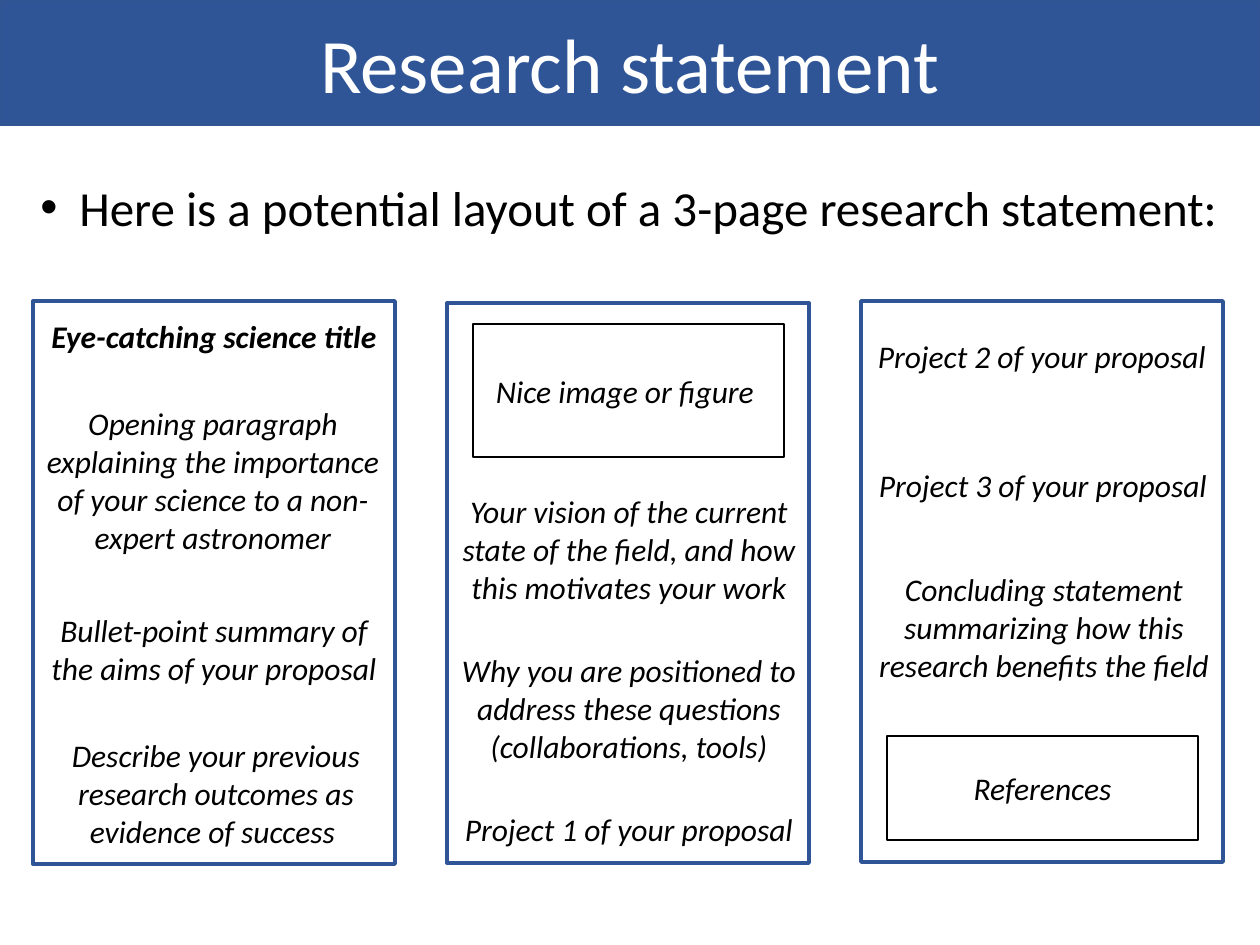
from pptx import Presentation, util as u
from pptx.dml.color import RGBColor
from pptx.enum import shapes, text
from lxml import etree

PX = 914400 / 126
COLORS = {"banner": "2F5597", "banner_edge": "325491", "paper": "FFFFFF", "ink": "000000"}
FONT = "Calibri"
PAGE_WIDTH, PAGE_HEIGHT = 1260, 945
SHEET_LEFT, SHEET_PITCH, SHEET_WIDTH = 33, 414, 362
FRAME_INSET, FRAME_WIDTH = 26, 311
LINE_HEIGHT, TEXT_MARGIN = 38, 12

TITLE = "Research statement"
INTRO = "Here is a potential layout of a 3-page research statement:"
SHEETS = [
    {"top": 301, "height": 563, "frames": [], "notes": [
        (0, 311, 1, True, "Eye-catching science title"),
        (-1, 398, 4, False, "Opening paragraph explaining the importance of your science to a non-expert astronomer"),
        (0, 605, 2, False, "Bullet-point summary of the aims of your proposal"),
        (2, 730, 3, False, "Describe your previous research outcomes as evidence of success "),
    ]},
    {"top": 303, "height": 560, "frames": [(324, 133, "Nice image or figure ")], "notes": [
        (1, 486, 3, False, "Your vision of the current state of the field, and how this motivates your work"),
        (1, 645, 3, False, "Why you are positioned to address these questions (collaborations, tools)"),
        (1, 804, 1, False, "Project 1 of your proposal"),
    ]},
    {"top": 301, "height": 561, "frames": [(736, 104, "References")], "notes": [
        (0, 331, 1, False, "Project 2 of your proposal"),
        (1, 460, 1, False, "Project 3 of your proposal"),
        (2, 564, 3, False, "Concluding statement summarizing how this research benefits the field"),
    ]},
]


def px(*lengths):
    return [u.Emu(round(length * PX)) for length in lengths]


def color(name):
    return RGBColor.from_string(COLORS[name])


def write(shape, words, size, ink="ink", bold=False, italic=False, align=text.PP_ALIGN.CENTER):
    frame = shape.text_frame
    frame.word_wrap = True
    para = frame.paragraphs[0]
    para.text = words
    para.alignment = align
    font = para.font
    font.name, font.size, font.bold, font.italic = FONT, u.Pt(size), bold, italic
    font.color.rgb = color(ink)
    return para


def add_box(page, area, fill, line, weight):
    box = page.shapes.add_shape(shapes.MSO_SHAPE.RECTANGLE, *px(*area))
    box.shadow.inherit = False
    if fill:
        box.fill.solid()
        box.fill.fore_color.rgb = color(fill)
    else:
        box.fill.background()
    box.line.color.rgb = color(line)
    box.line.width = u.Pt(weight)
    box.text_frame.vertical_anchor = text.MSO_ANCHOR.MIDDLE
    return box


def add_note(page, area, words, size, **style):
    note = page.shapes.add_textbox(*px(*area))
    para = write(note, words, size, **style)
    note.text_frame.auto_size = text.MSO_AUTO_SIZE.SHAPE_TO_FIT_TEXT
    return para


def add_bullet(para, indent):
    properties = para._p.get_or_add_pPr()
    properties.set("marL", str(px(indent)[0]))
    properties.set("indent", str(px(-indent)[0]))
    namespace = "{http://schemas.openxmlformats.org/drawingml/2006/main}"
    etree.SubElement(properties, namespace + "buFont").set("typeface", "Arial")
    etree.SubElement(properties, namespace + "buChar").set("char", "•")
    properties.append(properties.find(namespace + "defRPr"))


def add_sheet(page, index, sheet):
    left = SHEET_LEFT + index * SHEET_PITCH
    add_box(page, (left, sheet["top"], SHEET_WIDTH, sheet["height"]), "paper", "banner", 2.25)
    for top, height, words in sheet["frames"]:
        frame = add_box(page, (left + FRAME_INSET, top, FRAME_WIDTH, height), None, "ink", 1.5)
        write(frame, words, 18, italic=True)
    for shift, top, lines, bold, words in sheet["notes"]:
        area = (left + shift, top, SHEET_WIDTH, lines * LINE_HEIGHT + TEXT_MARGIN)
        add_note(page, area, words, 18, bold=bold, italic=True)


def main():
    deck = Presentation()
    deck.slide_width, deck.slide_height = px(PAGE_WIDTH, PAGE_HEIGHT)
    page = deck.slides.add_slide(deck.slide_layouts[6])
    banner = add_box(page, (0, 0, PAGE_WIDTH, 125), "banner", "banner_edge", 1)
    write(banner, TITLE, 44, ink="paper")
    for index, sheet in enumerate(SHEETS):
        add_sheet(page, index, sheet)
    intro = add_note(page, (28, 171, 1215, 72), INTRO, 28, align=text.PP_ALIGN.LEFT)
    intro.space_after = u.Pt(24)
    add_bullet(intro, 39)
    deck.save("out.pptx")


if __name__ == "__main__":
    main()
